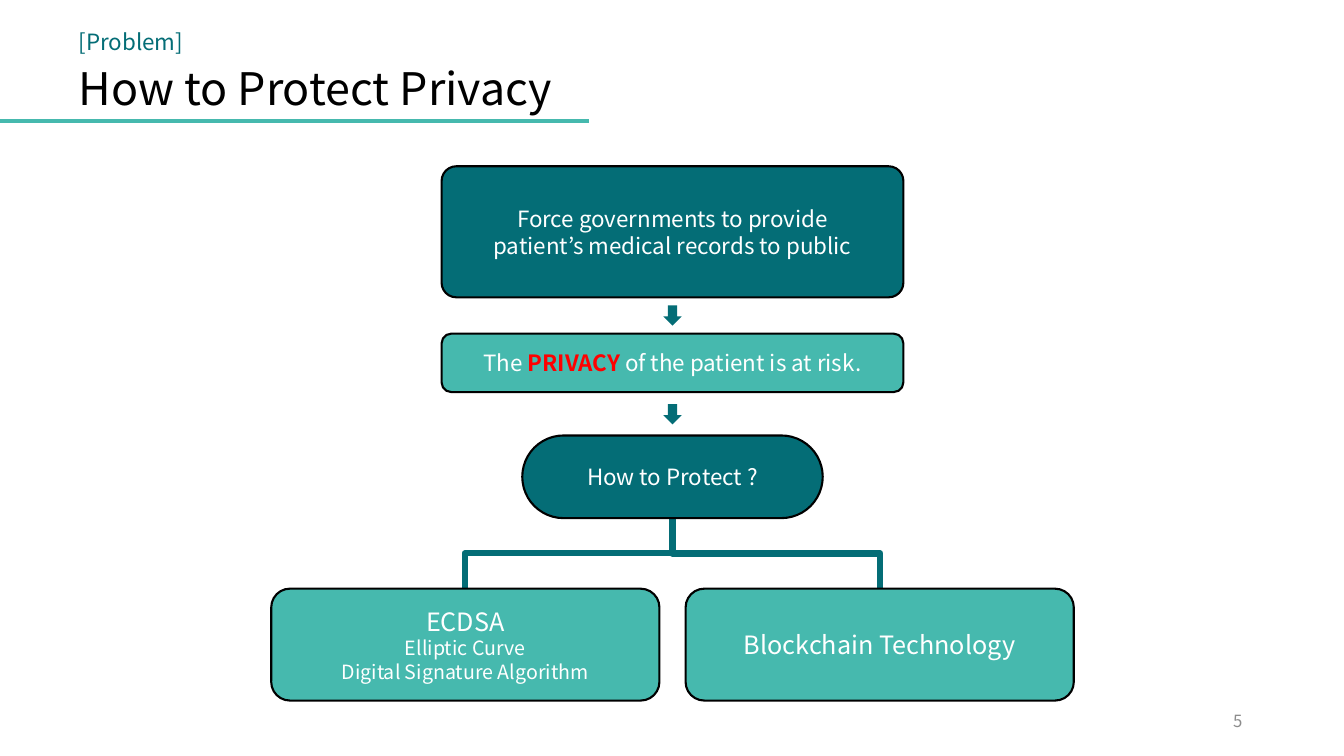
from pptx import Presentation
from pptx.dml.color import RGBColor
from pptx.enum.shapes import MSO_CONNECTOR, MSO_SHAPE
from pptx.enum.text import MSO_ANCHOR, MSO_AUTO_SIZE, PP_ALIGN
from pptx.oxml.ns import qn
from pptx.util import Inches, Pt
from lxml import etree

ROUNDED, DOWN_ARROW = MSO_SHAPE.ROUNDED_RECTANGLE, MSO_SHAPE.DOWN_ARROW
STRAIGHT, ELBOW = MSO_CONNECTOR.STRAIGHT, MSO_CONNECTOR.ELBOW
MIDDLE = MSO_ANCHOR.MIDDLE
LEFT, CENTER, RIGHT = PP_ALIGN.LEFT, PP_ALIGN.CENTER, PP_ALIGN.RIGHT
NO_AUTOFIT = MSO_AUTO_SIZE.NONE

FONT = "Noto Sans CJK KR"
DARK_TEAL = RGBColor(0x04, 0x6D, 0x76)
TEAL = RGBColor(0x46, 0xB9, 0xAE)
BLACK = RGBColor(0, 0, 0)
WHITE = RGBColor(0xFF, 0xFF, 0xFF)
RED = RGBColor(0xFF, 0, 0)
GRAY = RGBColor(0x8C, 0x8C, 0x8C)

MID_X = 6.67  # vertical axis of the flow


def style_text(paragraph, size, color, align):
    paragraph.font.name = FONT
    paragraph.font.size = Pt(size)
    paragraph.font.color.rgb = color
    paragraph.alignment = align


def add_line(kind, x1, y1, x2, y2, color, width):
    line = slide.shapes.add_connector(kind, Inches(x1), Inches(y1), Inches(x2), Inches(y2))
    line.line.color.rgb = color
    line.line.width = Pt(width)
    etree.SubElement(line._element.spPr, qn("a:effectLst"))
    return line


prs = Presentation()
prs.slide_width, prs.slide_height = Inches(13.33), Inches(7.5)
slide = prs.slides.add_slide(prs.slide_layouts[5])

# Title with section label and underline
title = slide.shapes.title
title.left, title.top, title.width, title.height = (
    Inches(0.68), Inches(0.19), Inches(11.93), Inches(1.01))
title.text_frame.text = "[Problem]\nHow to Protect Privacy"
title.text_frame.vertical_anchor = MIDDLE
title.text_frame.auto_size = NO_AUTOFIT
for paragraph, size, color in zip(title.text_frame.paragraphs, (16, 32), (DARK_TEAL, BLACK)):
    style_text(paragraph, size, color, LEFT)
    paragraph.line_spacing = 1.1
add_line(STRAIGHT, 0, 1.2, 5.84, 1.2, TEAL, 3)

# Page number
page_number = slide.shapes.add_textbox(Inches(9.42), Inches(6.95), Inches(3), Inches(0.4))
page_number.text_frame.word_wrap = True
page_number.text_frame.vertical_anchor = MIDDLE
page_number.text_frame.text = "5"
style_text(page_number.text_frame.paragraphs[0], 12, GRAY, RIGHT)

# Branches from the question to both answers, turned so they leave downwards
BRANCH_TOP, BRANCH_BOTTOM, BRANCH_SPAN = 5.14, 5.84, 2.06
drop = BRANCH_BOTTOM - BRANCH_TOP
mid_y = (BRANCH_TOP + BRANCH_BOTTOM) / 2
for side, turn in ((-1, 90), (1, 270)):
    branch_x = MID_X + side * BRANCH_SPAN / 2
    branch = add_line(ELBOW, branch_x + side * drop / 2, mid_y - BRANCH_SPAN / 2,
                      branch_x - side * drop / 2, mid_y + BRANCH_SPAN / 2, DARK_TEAL, 4.5)
    branch._element.spPr.find(qn("a:xfrm")).set("rot", str(turn * 60000))

# Boxes: center x, top, width, height, corner, fill, paragraphs of (size, runs)
boxes = [
    (MID_X, 1.65, 4.58, 1.3, 0.112, DARK_TEAL,
     [(16, ["Force governments to provide\vpatient’s medical records to public"])]),
    (MID_X, 3.31, 4.58, 0.58, 0.167, TEAL,
     [(16, ["The ", "PRIVACY", " of the patient is at risk."])]),
    (MID_X, 4.32, 2.98, 0.82, 0.5, DARK_TEAL, [(16, ["How to Protect ?"])]),
    (MID_X - 2.055, 5.84, 3.85, 1.11, 0.167, TEAL,
     [(18, ["ECDSA"]), (14, ["Elliptic Curve"]), (14, ["Digital Signature Algorithm"])]),
    (MID_X + 2.055, 5.84, 3.85, 1.11, 0.167, TEAL, [(18, ["Blockchain Technology"])]),
]
for center_x, top, width, height, corner, fill, paragraphs in boxes:
    box = slide.shapes.add_shape(ROUNDED, Inches(center_x - width / 2), Inches(top),
                                 Inches(width), Inches(height))
    box.shadow.inherit = False
    box.adjustments[0] = corner
    box.fill.solid()
    box.fill.fore_color.rgb = fill
    box.line.color.rgb = BLACK
    box.line.width = Pt(1.5)
    frame = box.text_frame
    frame.vertical_anchor = MIDDLE
    frame.text = "\n".join("".join(runs) for size, runs in paragraphs)
    for paragraph, (size, runs) in zip(frame.paragraphs, paragraphs):
        style_text(paragraph, size, WHITE, CENTER)
        if len(runs) > 1:
            paragraph.clear()
            for words in runs:
                run = paragraph.add_run()
                run.text = words
                if words == "PRIVACY":
                    run.font.bold = True
                    run.font.color.rgb = RED

# Arrows between the steps
for top in (3.03, 4.01):
    arrow = slide.shapes.add_shape(DOWN_ARROW, Inches(MID_X - 0.09), Inches(top),
                                   Inches(0.18), Inches(0.2))
    arrow.shadow.inherit = False
    arrow.fill.solid()
    arrow.fill.fore_color.rgb = DARK_TEAL
    arrow.line.fill.background()

prs.save("out.pptx")
